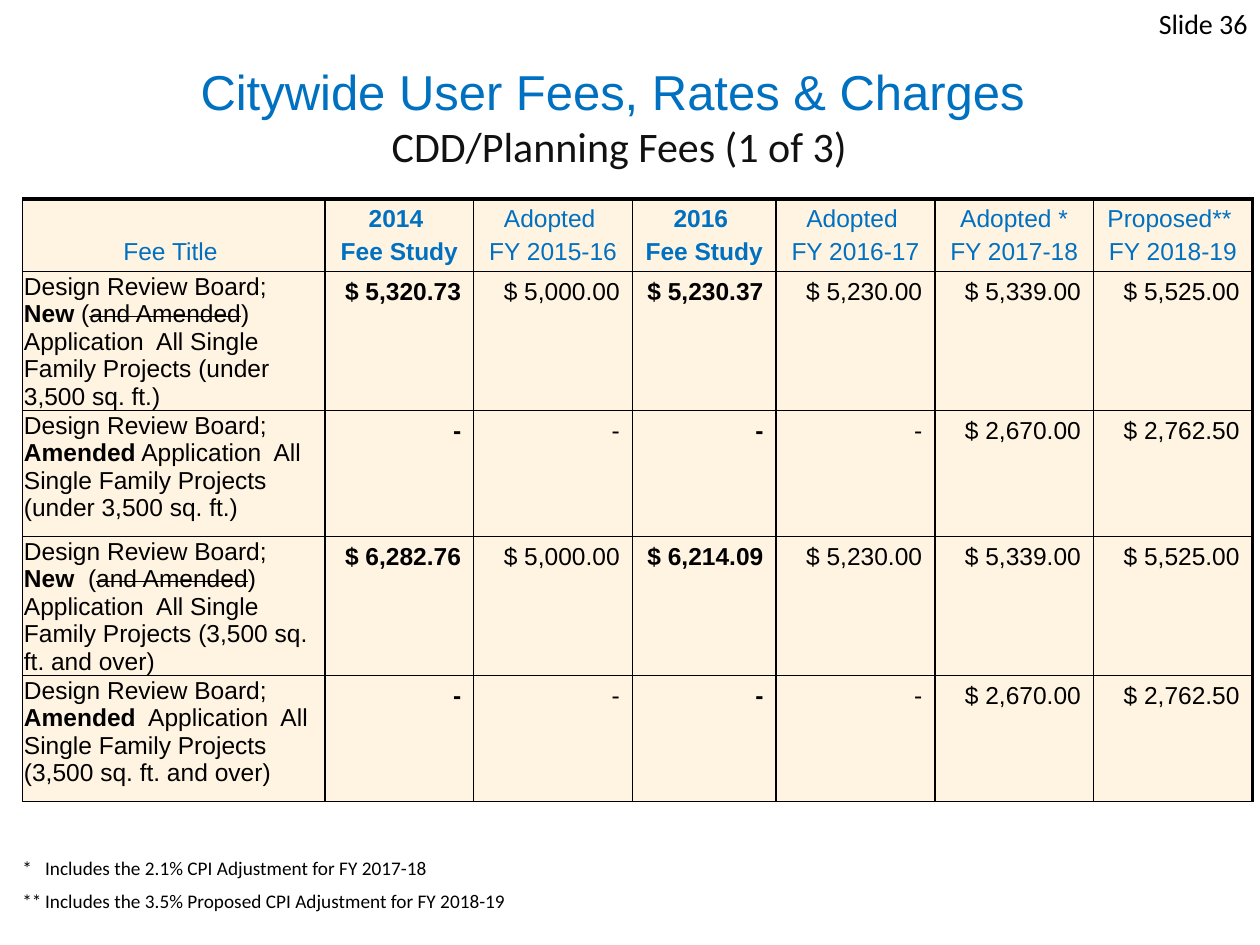
from dataclasses import dataclass

from lxml.etree import SubElement
from pptx import Presentation
from pptx.dml.color import RGBColor
from pptx.enum.text import MSO_ANCHOR, MSO_AUTO_SIZE, PP_ALIGN
from pptx.oxml.ns import qn
from pptx.util import Inches, Pt


@dataclass(frozen=True)
class Theme:
    blue: str = "0070C0"
    ink: str = "111111"
    black: str = "000000"
    cream: str = "FFF3E1"
    heading: str = "Arial"
    body: str = "Calibri"
    title: int = 28
    subtitle: int = 24
    table: int = 14
    note: int = 11
    page: int = 16
    thin: float = 1
    thick: float = 2.25


T = Theme()
COLUMN_WIDTHS = [2.4, 1.18, 1.26, 1.14, 1.26, 1.26, 1.26]
ROW_HEIGHTS = [0.42, 1.05, 1, 1, 1]
STUDY_COLUMNS = (1, 3)
HEADERS = [
    "Fee Title ",
    "2014 \nFee Study",
    "Adopted \nFY 2015-16",
    "2016 \nFee Study",
    "Adopted \nFY 2016-17",
    "Adopted *\nFY 2017-18",
    "Proposed** \nFY 2018-19",
]
BOARD = ("Design Review Board; ", "")
SMALL = "Application  All Single Family Projects (under 3,500 sq. ft.)"
LARGE = "Application  All Single Family Projects (3,500 sq. ft. and over)"
NEW, AMENDED, STRUCK = ("New", "bold"), ("Amended", "bold"), ("and Amended", "strike")
AMENDED_FEES = ["-", "-", "-", "-", "$ 2,670.00", "$ 2,762.50"]
FEES = [
    ([BOARD, NEW, (" (", ""), STRUCK, (") " + SMALL, "")],
     ["$ 5,320.73", "$ 5,000.00", "$ 5,230.37", "$ 5,230.00", "$ 5,339.00", "$ 5,525.00"]),
    ([BOARD, AMENDED, (" " + SMALL, "")], AMENDED_FEES),
    ([BOARD, NEW, ("  (", ""), STRUCK, (") " + LARGE, "")],
     ["$ 6,282.76", "$ 5,000.00", "$ 6,214.09", "$ 5,230.00", "$ 5,339.00", "$ 5,525.00"]),
    ([BOARD, AMENDED, ("  " + LARGE, "")], AMENDED_FEES),
]
NOTES = [
    "*\tIncludes the 2.1% CPI Adjustment for FY 2017-18",
    "**\tIncludes the 3.5% Proposed CPI Adjustment for FY 2018-19",
]


def style(r, font, size, color, bold=False):
    r.font.name = font
    r.font.size = Pt(size)
    r.font.color.rgb = RGBColor.from_string(color)
    r.font.bold = bold


def add_title(s):
    title = s.shapes.title
    title.left, title.top = Inches(0.75), Inches(0.42)
    title.width, title.height = Inches(8.33), Inches(1)
    tf = title.text_frame
    tf.text = "Citywide User Fees, Rates & Charges \vCDD/Planning Fees (1 of 3)"
    tf.auto_size = MSO_AUTO_SIZE.NONE
    tf.vertical_anchor = MSO_ANCHOR.MIDDLE
    p = tf.paragraphs[0]
    p.alignment = PP_ALIGN.CENTER
    heading, subheading = p.runs
    style(heading, T.heading, T.title, T.blue)
    style(subheading, T.body, T.subtitle, T.ink)


def add_text(s, text, left, top, width, height, size, align=PP_ALIGN.LEFT):
    tf = s.shapes.add_textbox(Inches(left), Inches(top), Inches(width), Inches(height)).text_frame
    tf.word_wrap = True
    tf.text = text
    for p in tf.paragraphs:
        p.alignment = align
        for r in p.runs:
            style(r, T.body, size, T.black)
    return tf


def add_notes(s):
    tf = add_text(s, "\n".join(NOTES), 0.08, 6.75, 6.5, 0.56, T.note)
    for i, p in enumerate(tf.paragraphs):
        pPr = p._p.get_or_add_pPr()
        pPr.set("marL", str(Inches(0.18)))
        pPr.set("indent", str(-Inches(0.18)))
        if i:
            p.space_before = Pt(T.note * 0.5)


def set_borders(cell, top, right):
    tcPr = cell._tc.get_or_add_tcPr()
    for side, width in (("L", T.thin), ("R", right), ("T", top), ("B", T.thin)):
        ln = SubElement(tcPr, qn(f"a:ln{side}"), w=str(Pt(width)))
        fill = SubElement(ln, qn("a:solidFill"))
        SubElement(fill, qn("a:srgbClr"), val=T.black)


def format_cell(cell, row, col):
    last = len(COLUMN_WIDTHS) - 1
    set_borders(cell, T.thin if row else T.thick, T.thick if col == last else T.thin)
    cell.fill.solid()
    cell.fill.fore_color.rgb = RGBColor.from_string(T.cream)


def fill_text(cell, text, align, anchor, color, bold):
    cell.text_frame.text = text
    cell.vertical_anchor = anchor
    for i, p in enumerate(cell.text_frame.paragraphs):
        p.alignment = align
        if i:
            p.space_before = Pt(T.table * 0.2)
        style(p.runs[0], T.heading, T.table, color, bold)


def fill_fee_title(cell, parts):
    cell.margin_left = cell.margin_top = cell.margin_right = Inches(0.01)
    cell.margin_bottom = 0
    p = cell.text_frame.paragraphs[0]
    for text, look in parts:
        r = p.add_run()
        r.text = text
        style(r, T.heading, T.table, T.black, look == "bold")
        if look == "strike":
            r._r.get_or_add_rPr().set("strike", "sngStrike")


def add_fee_table(s):
    table = s.shapes.add_table(
        len(ROW_HEIGHTS), len(COLUMN_WIDTHS), Inches(0.18), Inches(1.58),
        Inches(sum(COLUMN_WIDTHS)), Inches(sum(ROW_HEIGHTS))).table
    table.first_row = table.horz_banding = False
    for column, width in zip(table.columns, COLUMN_WIDTHS):
        column.width = Inches(width)
    for row, height in zip(table.rows, ROW_HEIGHTS):
        row.height = Inches(height)
    for row in range(len(ROW_HEIGHTS)):
        for col in range(len(COLUMN_WIDTHS)):
            format_cell(table.cell(row, col), row, col)
    for col, text in enumerate(HEADERS):
        fill_text(table.cell(0, col), text, PP_ALIGN.CENTER, MSO_ANCHOR.BOTTOM,
                  T.blue, col in STUDY_COLUMNS)
    for row, (parts, amounts) in enumerate(FEES, 1):
        fill_fee_title(table.cell(row, 0), parts)
        for col, amount in enumerate(amounts, 1):
            fill_text(table.cell(row, col), amount, PP_ALIGN.RIGHT, MSO_ANCHOR.TOP,
                      T.black, col in STUDY_COLUMNS)


def main():
    prs = Presentation()
    prs.slide_width, prs.slide_height = Inches(10), Inches(7.5)
    s = prs.slides.add_slide(prs.slide_layouts[5])
    add_title(s)
    add_fee_table(s)
    add_notes(s)
    add_text(s, "Slide 36", 7.67, 0, 2.33, 0.5, T.page, PP_ALIGN.RIGHT)
    prs.save("out.pptx")


if __name__ == "__main__":
    main()
